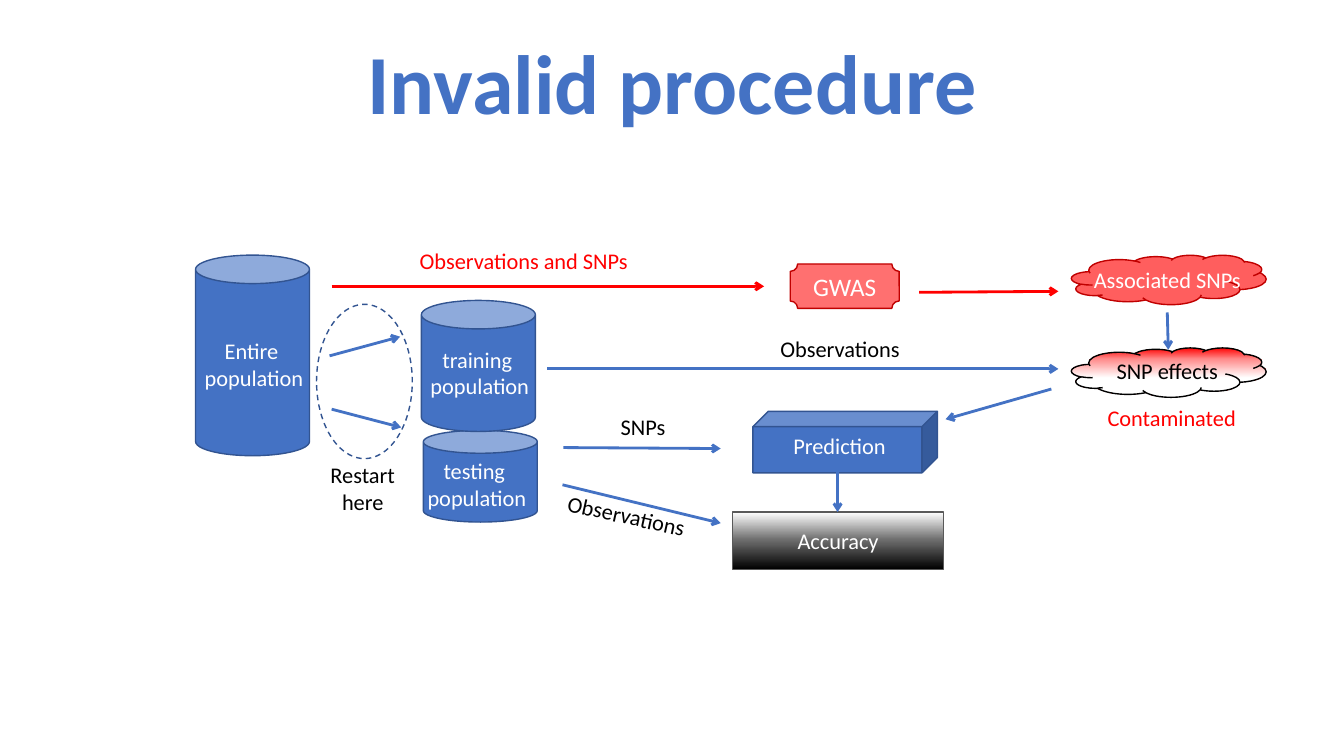
from pptx import Presentation
from pptx.dml.color import RGBColor
from pptx.enum.dml import MSO_LINE
from pptx.enum.shapes import MSO_CONNECTOR, MSO_SHAPE
from pptx.enum.text import MSO_ANCHOR, PP_ALIGN
from pptx.oxml.ns import qn
from pptx.util import Pt
from lxml.etree import SubElement

theme = {
    "font": "Calibri",
    "blue": "4472C4", "navy": "325491", "red": "FF0000", "dark_red": "C00000",
    "white": "FFFFFF", "black": "000000", "gray": "595959",
    "title": 60, "box": 18, "label": 16,
    "fade_red": [(0, "FF0000"), (23, "FF8B8B"), (61, "FFFFFF"), (99, "FFFFFF")],
    "fade_black": [(0, "FFFFFF"), (48, "6E6E6E"), (100, "000000")],
}


def rgb(name):
    return RGBColor.from_string(theme[name])


def write(s, text, color, size, bold=False, anchor=MSO_ANCHOR.TOP, spacing=None):
    tf = s.text_frame
    tf.word_wrap = True
    tf.vertical_anchor = anchor
    tf.text = text
    font = {"name": theme["font"], "size": Pt(theme[size]), "bold": bold}
    for p in tf.paragraphs:
        p.alignment = PP_ALIGN.CENTER
        p.line_spacing = spacing
        for r in p.runs:
            for key, value in font.items():
                setattr(r.font, key, value)
            r.font.color.rgb = rgb(color)


prs = Presentation()
prs.slide_width, prs.slide_height = Pt(960), Pt(540)
slide = prs.slides.add_slide(prs.slide_layouts[6])

# Boxes, back to front: shape, left, top, width, height, fill, opacity, line
boxes = [
    (MSO_SHAPE.CLOUD, 765.4, 248.4, 139, 35.3, "fade_red", 100, "black"),
    (MSO_SHAPE.CAN, 302.4, 307.4, 81.4, 65.5, "blue", 100, "navy"),
    (MSO_SHAPE.CAN, 139.7, 182.2, 81.4, 143.3, "blue", 100, "navy"),
    (MSO_SHAPE.CAN, 301, 214.6, 81.4, 93.6, "blue", 100, "navy"),
    (MSO_SHAPE.CLOUD, 765.4, 182.2, 139, 35.3, "red", 63, "dark_red"),
    (MSO_SHAPE.PLAQUE, 564.5, 188.6, 77.8, 31.7, "red", 56, "dark_red"),
    (MSO_SHAPE.CUBE, 537.8, 293.8, 131.8, 43.9, "blue", 100, "navy"),
    (MSO_SHAPE.RECTANGLE, 523.4, 365.8, 150.5, 41, "fade_black", 100, "gray"),
    (MSO_SHAPE.OVAL, 226.1, 217.4, 68.4, 110.2, None, 100, "navy"),
]
for kind, x, y, w, h, fill, opacity, line in boxes:
    s = slide.shapes.add_shape(kind, Pt(x), Pt(y), Pt(w), Pt(h))
    s.shadow.inherit = False
    s.line.color.rgb = rgb(line)
    s.line.width = Pt(1)
    if fill is None:
        s.fill.background()
        s.line.dash_style = MSO_LINE.DASH
    elif fill.startswith("fade"):
        s.fill.gradient()
        s.fill.gradient_angle = 270
        stops = s._element.spPr.find(".//" + qn("a:gsLst"))
        stops.clear()
        for position, color in theme[fill]:
            stop = SubElement(stops, qn("a:gs"), pos=str(position * 1000))
            SubElement(stop, qn("a:srgbClr"), val=color)
    else:
        s.fill.solid()
        s.fill.fore_color.rgb = rgb(fill)
        if opacity < 100:
            color = s._element.spPr.find(qn("a:solidFill")).find(qn("a:srgbClr"))
            SubElement(color, qn("a:alpha"), val=str(opacity * 1000))
    if kind == MSO_SHAPE.PLAQUE:
        write(s, "GWAS", "white", "box", anchor=MSO_ANCHOR.MIDDLE)

# Arrows: start, end, color
arrows = [
    (235.4, 254.2, 285.8, 240.5, "blue"),
    (236.9, 292.3, 286.6, 305.3, "blue"),
    (236.9, 204.5, 545.8, 204.5, "red"),
    (391, 263.5, 756, 263.5, "blue"),
    (402.5, 319.7, 514.8, 320.4, "blue"),
    (751, 277.9, 675.4, 299.5, "blue"),
    (656.6, 208.8, 756, 208.1, "red"),
    (401.8, 346.3, 514.8, 373.7, "blue"),
    (598.3, 337, 598.3, 365.8, "blue"),
    (833.8, 223.2, 834.5, 249.8, "blue"),
]
for x1, y1, x2, y2, color in arrows:
    s = slide.shapes.add_connector(MSO_CONNECTOR.STRAIGHT, Pt(x1), Pt(y1), Pt(x2), Pt(y2))
    s.line.color.rgb = rgb(color)
    s.line.width = Pt(2)
    SubElement(s.line._get_or_add_ln(), qn("a:tailEnd"), type="arrow")
    SubElement(s._element.spPr, qn("a:effectLst"))

# Labels: text, left, top, width, color, rotation
labels = [
    ("testing \npopulation", 279.4, 323.3, 122.4, "white", 0),
    ("Entire \npopulation", 120.2, 237.6, 122.4, "white", 0),
    ("training \npopulation", 281.5, 243.4, 122.4, "white", 0),
    ("Associated SNPs", 772.6, 186.5, 122.4, "white", 0),
    ("Observations", 541.4, 236.2, 117.4, "black", 0),
    ("Observations and SNPs", 286.6, 172.8, 175, "red", 0),
    ("SNPs", 411.8, 291.6, 95, "black", 0),
    ("Prediction", 552.2, 305.3, 95, "white", 0),
    ("Observations", 396.7, 355, 101.5, "black", 12.6),
    ("Accuracy", 523.4, 373, 150.5, "white", 0),
    ("SNP effects", 772.6, 251.3, 122.4, "black", 0),
    ("Restart\nhere", 221, 326.2, 76.3, "black", 0),
    ("Contaminated", 778.3, 285.1, 117.4, "red", 0),
]
for text, x, y, w, color, rotation in labels:
    h = 26.6 + 19.5 * text.count("\n")
    s = slide.shapes.add_textbox(Pt(x), Pt(y), Pt(w), Pt(h))
    s.rotation = rotation
    write(s, text, color, "label")

# Title
s = slide.shapes.add_textbox(Pt(156.2), Pt(0), Pt(648), Pt(98.6))
write(s, "Invalid procedure", "blue", "title", True, MSO_ANCHOR.BOTTOM, 0.9)

prs.save("out.pptx")
